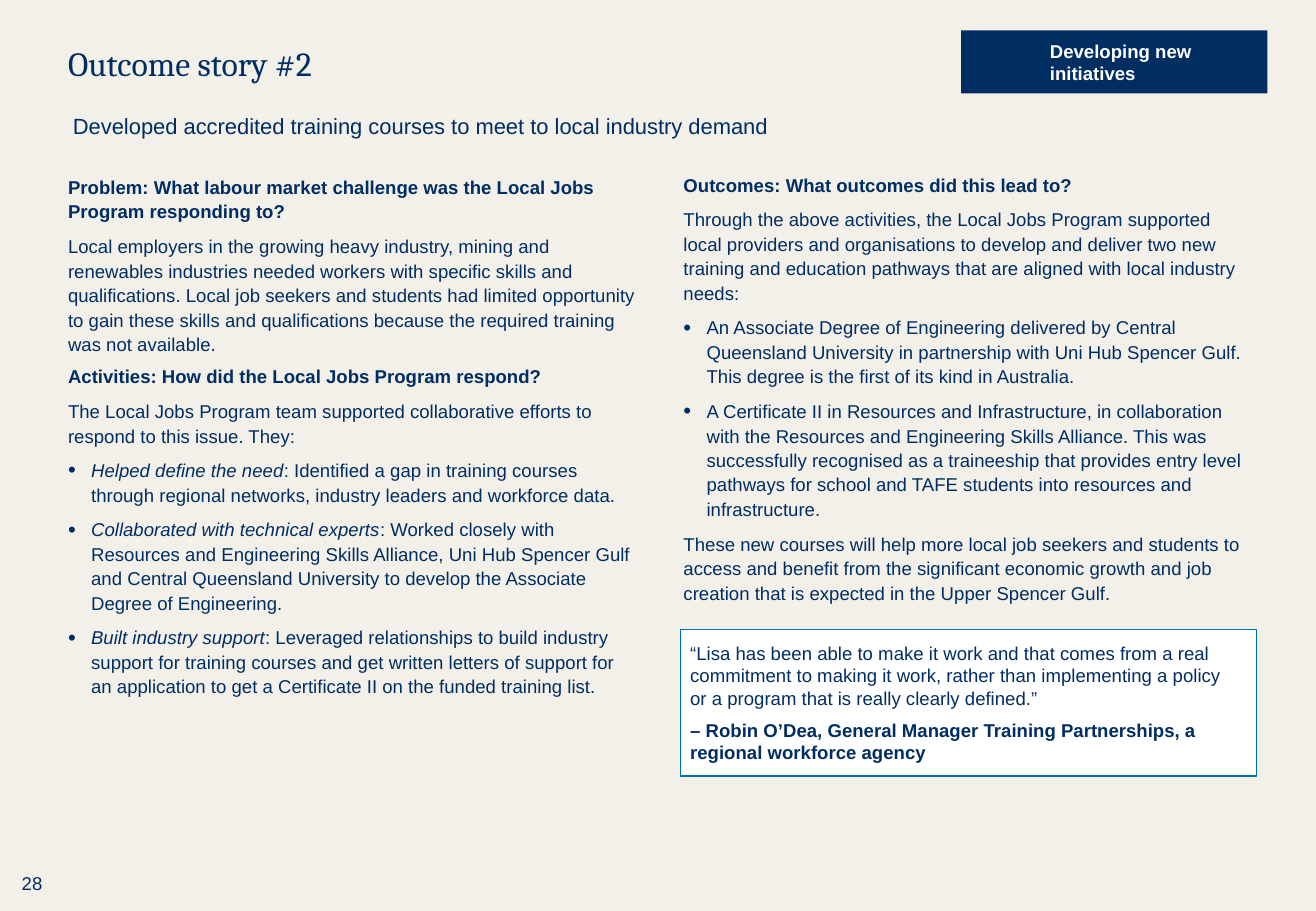
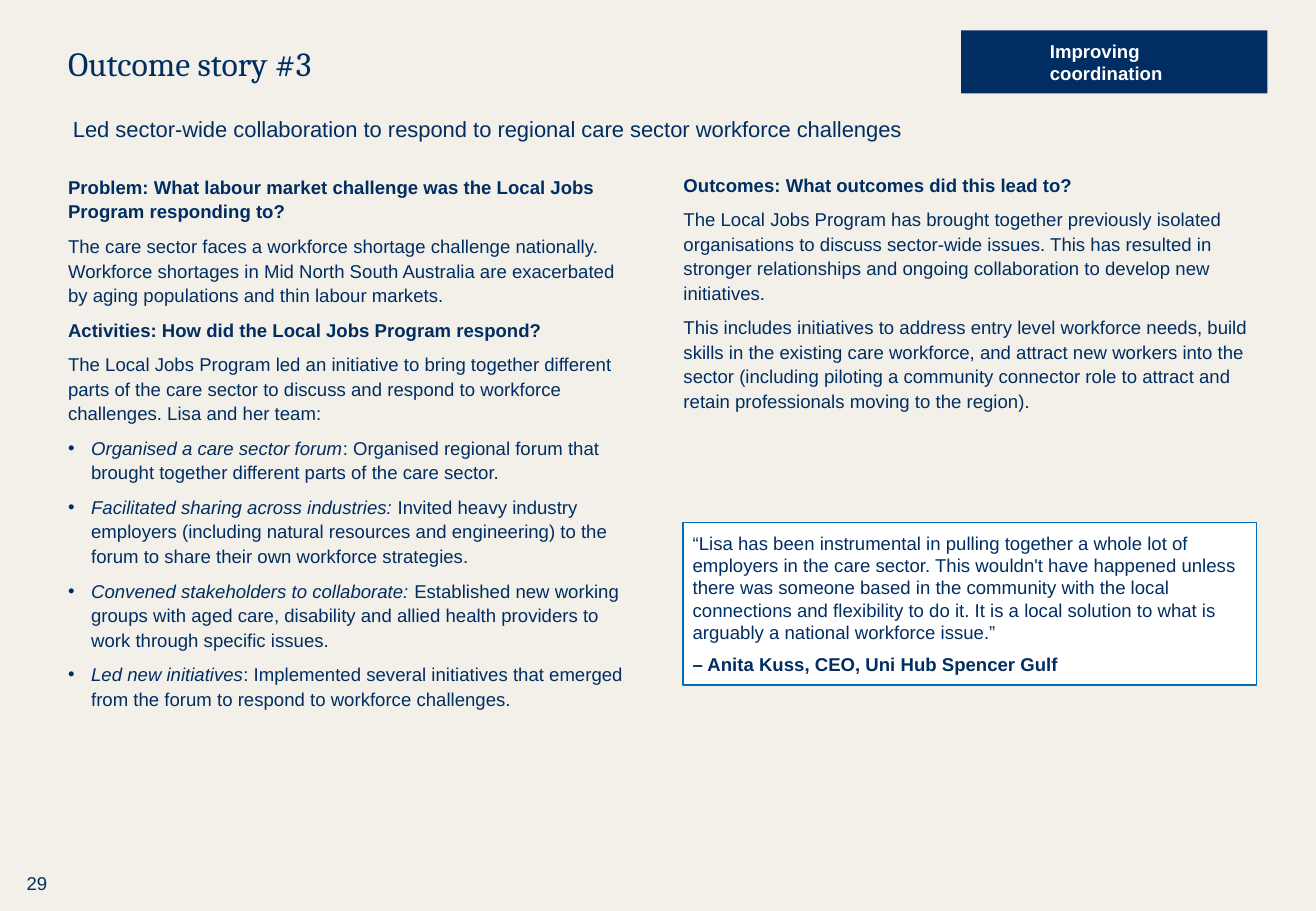
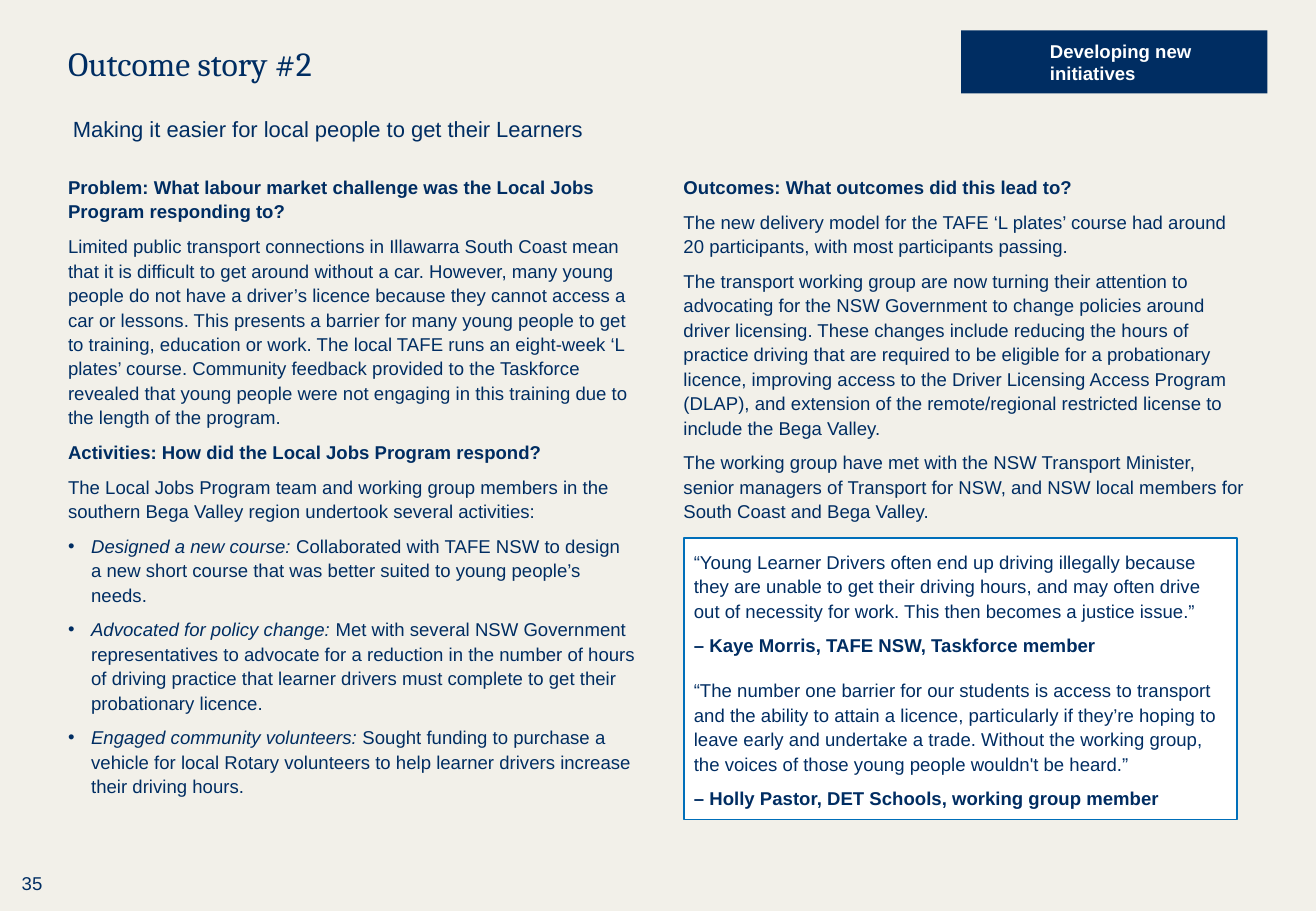
from dataclasses import dataclass

from lxml.etree import SubElement
from pptx import Presentation
from pptx.dml.color import RGBColor
from pptx.enum.shapes import MSO_SHAPE as Shape
from pptx.enum.text import MSO_ANCHOR as Anchor, MSO_AUTO_SIZE as AutoSize, PP_ALIGN as Align
from pptx.oxml.ns import qn
from pptx.util import Inches, Pt


@dataclass
class Theme:
    paper: RGBColor = RGBColor(0xF2, 0xF0, 0xE9)
    navy: RGBColor = RGBColor(0x00, 0x2D, 0x62)
    blue: RGBColor = RGBColor(0x00, 0x6F, 0xBA)
    white: RGBColor = RGBColor(0xFF, 0xFF, 0xFF)
    heading_font: str = "Cambria"
    body_font: str = "Arial"
    title_size: int = 20
    subtitle_size: int = 13
    body_size: int = 11


@dataclass
class Line:
    text: str
    lead: str = ""  # italic opening of a bullet
    bold: bool = False
    bullet: bool = False
    spacing: float = 1.1
    after: int = 6


THEME = Theme()
PAD = 0.08
LEFT, COLUMN_TOP, COLUMN_GAP = 0.48, 1.35, 0.39
FULL_WIDTH = 9.9
TEXT_WIDTH = (FULL_WIDTH - 2 * PAD - COLUMN_GAP) / 2
COLUMN_WIDTH = TEXT_WIDTH + 2 * PAD
BULLET_INDENT = 0.19


def place(box, left, top, width, height, margins=(PAD,) * 4, anchor=Anchor.TOP):
    """Position a box and set up its text frame."""
    box.left, box.top = Inches(left), Inches(top)
    box.width, box.height = Inches(width), Inches(height)
    frame = box.text_frame
    frame.word_wrap = True
    frame.auto_size = AutoSize.NONE
    frame.vertical_anchor = anchor
    (frame.margin_left, frame.margin_top,
     frame.margin_right, frame.margin_bottom) = map(Inches, margins)
    return frame


def write(frame, lines, size=THEME.body_size, font=THEME.body_font,
          color=THEME.navy, bullet_percent=100, align=Align.LEFT):
    """Fill a text frame with formatted paragraphs."""
    for number, line in enumerate(lines):
        para = frame.add_paragraph() if number else frame.paragraphs[0]
        props = para._p.get_or_add_pPr()
        indent = Inches(BULLET_INDENT) if line.bullet else 0
        props.set("marL", str(indent))
        props.set("indent", str(-indent))
        if line.bullet:
            bullet_color = SubElement(props, qn("a:buClr"))
            SubElement(bullet_color, qn("a:srgbClr"), val=str(color))
            SubElement(props, qn("a:buSzPct"), val=str(bullet_percent * 1000))
            SubElement(props, qn("a:buFont"), typeface=font)
            SubElement(props, qn("a:buChar"), char="•")
        else:
            SubElement(props, qn("a:buNone"))
        para.alignment = align
        para.line_spacing = line.spacing
        para.space_before = Pt(0)
        para.space_after = Pt(line.after)
        for text, italic in ((line.lead, True), (line.text, False)):
            if text:
                span = para.add_run()
                span.text = text
                span.font.name, span.font.size = font, Pt(size)
                span.font.bold, span.font.italic = line.bold, italic
                span.font.color.rgb = color


# Shared headings
PROBLEM = Line("Problem: What labour market challenge was the Local Jobs Program responding to?", bold=True)
ACTIVITIES = "Activities: How did the Local Jobs Program respond?"
OUTCOMES = "Outcomes: What outcomes did this lead to?"

# Content of each page
STORIES = [
    dict(
        title="Outcome story #2",
        tag="Developing new initiatives",
        subtitle=Line("Developed accredited training courses to meet to local industry demand", spacing=1.0),
        bullet_percent=120,
        left=[
            PROBLEM,
            Line("Local employers in the growing heavy industry, mining and renewables industries needed "
                 "workers with specific skills and qualifications. Local job seekers and students had "
                 "limited opportunity to gain these skills and qualifications because the required "
                 "training was not available."),
            Line(ACTIVITIES, bold=True, spacing=1.0),
            Line("The Local Jobs Program team supported collaborative efforts to respond to this issue. They:"),
            Line(": Identified a gap in training courses through regional networks, industry leaders "
                 "and workforce data.", "Helped define the need", bullet=True),
            Line(": Worked closely with Resources and Engineering Skills Alliance, Uni Hub Spencer Gulf "
                 "and Central Queensland University to develop the Associate Degree of Engineering.",
                 "Collaborated with technical experts", bullet=True),
            Line(": Leveraged relationships to build industry support for training courses and get "
                 "written letters of support for an application to get a Certificate II on the funded "
                 "training list.", "Built industry support", bullet=True),
        ],
        right=[
            Line(OUTCOMES, bold=True, spacing=1.0),
            Line("Through the above activities, the Local Jobs Program supported local providers and "
                 "organisations to develop and deliver two new training and education pathways that are "
                 "aligned with local industry needs:"),
            Line("An Associate Degree of Engineering delivered by Central Queensland University in "
                 "partnership with Uni Hub Spencer Gulf. This degree is the first of its kind in "
                 "Australia.", bullet=True),
            Line("A Certificate II in Resources and Infrastructure, in collaboration with the Resources "
                 "and Engineering Skills Alliance. This was successfully recognised as a traineeship that "
                 "provides entry level pathways for school and TAFE students into resources and "
                 "infrastructure.", bullet=True),
            Line("These new courses will help more local job seekers and students to access and benefit "
                 "from the significant economic growth and job creation that is expected in the Upper "
                 "Spencer Gulf."),
        ],
        quote_at=(5.6, 5.18, 4.74, 1.21),
        quote_right_pad=0.12,
        quotes=[
            Line("“Lisa has been able to make it work and that comes from a real commitment to making it "
                 "work, rather than implementing a policy or a program that is really clearly defined.”",
                 spacing=1.0),
            Line("– Robin O’Dea, General Manager Training Partnerships, a regional workforce agency",
                 bold=True, spacing=1.0, after=0),
        ],
        number="28",
        number_right_pad=0.09,
    ),
    dict(
        title="Outcome story #3",
        tag="Improving coordination",
        subtitle=Line("Led sector-wide collaboration to respond to regional care sector workforce challenges"),
        bullet_percent=100,
        left=[
            PROBLEM,
            Line("The care sector faces a workforce shortage challenge nationally. Workforce shortages in "
                 "Mid North South Australia are exacerbated by aging populations and thin labour markets."),
            Line(ACTIVITIES, bold=True),
            Line("The Local Jobs Program led an initiative to bring together different parts of the care "
                 "sector to discuss and respond to workforce challenges. Lisa and her team:"),
            Line(": Organised regional forum that brought together different parts of the care sector.",
                 "Organised a care sector forum", bullet=True),
            Line(" Invited heavy industry employers (including natural resources and engineering) to the "
                 "forum to share their own workforce strategies.",
                 "Facilitated sharing across industries:", bullet=True),
            Line(" Established new working groups with aged care, disability and allied health providers "
                 "to work through specific issues.", "Convened stakeholders to collaborate:", bullet=True),
            Line(": Implemented several initiatives that emerged from the forum to respond to workforce "
                 "challenges.", "Led new initiatives", bullet=True),
        ],
        right=[
            Line(OUTCOMES, bold=True, spacing=1.0),
            Line("The Local Jobs Program has brought together previously isolated organisations to discuss "
                 "sector-wide issues. This has resulted in stronger relationships and ongoing "
                 "collaboration to develop new initiatives."),
            Line("This includes initiatives to address entry level workforce needs, build skills in the "
                 "existing care workforce, and attract new workers into the sector (including piloting a "
                 "community connector role to attract and retain professionals moving to the region)."),
        ],
        quote_at=(5.62, 4.3, 4.72, 1.34),
        quote_right_pad=PAD,
        quotes=[
            Line("“Lisa has been instrumental in pulling together a whole lot of employers in the care "
                 "sector. This wouldn't have happened unless there was someone based in the community "
                 "with the local connections and flexibility to do it. It is a local solution to what is "
                 "arguably a national workforce issue.”", spacing=1.0),
            Line("– Anita Kuss, CEO, Uni Hub Spencer Gulf", bold=True, spacing=1.0, after=0),
        ],
        number="29",
        number_right_pad=0.05,
    ),
    dict(
        title="Outcome story #2",
        tag="Developing new initiatives",
        subtitle=Line("Making it easier for local people to get their Learners"),
        bullet_percent=100,
        left=[
            PROBLEM,
            Line("Limited public transport connections in Illawarra South Coast mean that it is difficult "
                 "to get around without a car. However, many young people do not have a driver’s licence "
                 "because they cannot access a car or lessons. This presents a barrier for many young "
                 "people to get to training, education or work. The local TAFE runs an eight-week ‘L "
                 "plates’ course. Community feedback provided to the Taskforce revealed that young people "
                 "were not engaging in this training due to the length of the program."),
            Line(ACTIVITIES, bold=True),
            Line("The Local Jobs Program team and working group members in the southern Bega Valley region "
                 "undertook several activities:"),
            Line(" Collaborated with TAFE NSW to design a new short course that was better suited to young "
                 "people’s needs.", "Designed a new course:", bullet=True),
            Line(" Met with several NSW Government representatives to advocate for a reduction in the "
                 "number of hours of driving practice that learner drivers must complete to get their "
                 "probationary licence.", "Advocated for policy change:", bullet=True),
            Line(" Sought funding to purchase a vehicle for local Rotary volunteers to help learner "
                 "drivers increase their driving hours.", "Engaged community volunteers:", bullet=True),
        ],
        right=[
            Line(OUTCOMES, bold=True),
            Line("The new delivery model for the TAFE ‘L plates’ course had around 20 participants, with "
                 "most participants passing."),
            Line("The transport working group are now turning their attention to advocating for the NSW "
                 "Government to change policies around driver licensing. These changes include reducing "
                 "the hours of practice driving that are required to be eligible for a probationary "
                 "licence, improving access to the Driver Licensing Access Program (DLAP), and extension "
                 "of the remote/regional restricted license to include the Bega Valley."),
            Line("The working group have met with the NSW Transport Minister, senior managers of Transport "
                 "for NSW, and NSW local members for South Coast and Bega Valley."),
        ],
        quote_at=(5.63, 4.43, 4.55, 2.32),
        quote_right_pad=PAD,
        quotes=[
            Line("“Young Learner Drivers often end up driving illegally because they are unable to get "
                 "their driving hours, and may often drive out of necessity for work. This then becomes a "
                 "justice issue.”"),
            Line("– Kaye Morris, TAFE NSW, Taskforce member", bold=True, after=12),
            Line("“The number one barrier for our students is access to transport and the ability to "
                 "attain a licence, particularly if they’re hoping to leave early and undertake a trade. "
                 "Without the working group, the voices of those young people wouldn't be heard.”"),
            Line("– Holly Pastor, DET Schools, working group member", bold=True),
        ],
        number="35",
        number_right_pad=0.09,
    ),
]

# Deck and shared background
deck = Presentation()
deck.slide_width, deck.slide_height = Inches(10.83), Inches(7.5)
background = deck.slide_master.background.fill
background.solid()
background.fore_color.rgb = THEME.paper
two_columns = deck.slide_layouts.get_by_name("Two Content")

for story in STORIES:
    page = deck.slides.add_slide(two_columns)
    title, left_column, right_column = page.placeholders

    # Title and subtitle
    frame = place(title, LEFT, 0.18, FULL_WIDTH, 0.67, anchor=Anchor.MIDDLE)
    write(frame, [Line(story["title"], spacing=1.0, after=0)], THEME.title_size, THEME.heading_font)
    subtitle = page.shapes.add_textbox(0, 0, 0, 0)
    frame = place(subtitle, LEFT, 0.85, FULL_WIDTH, 0.43, (0.12, PAD, PAD, PAD))
    write(frame, [story["subtitle"]], THEME.subtitle_size)

    # Body columns
    for column, left, key in ((left_column, LEFT, "left"),
                              (right_column, LEFT + TEXT_WIDTH + COLUMN_GAP, "right")):
        frame = place(column, left, COLUMN_TOP, COLUMN_WIDTH, 5.57)
        write(frame, story[key], bullet_percent=story["bullet_percent"])

    # Category tag
    tag = page.shapes.add_shape(Shape.RECTANGLE, 0, 0, 0, 0)
    tag.shadow.inherit = False
    tag.fill.solid()
    tag.fill.fore_color.rgb = THEME.navy
    tag.line.fill.background()
    frame = place(tag, 7.91, 0.25, 2.52, 0.52, (0.73, 0, PAD, 0), Anchor.MIDDLE)
    write(frame, [Line(story["tag"], bold=True, spacing=1.0, after=0)], color=THEME.white)

    # Quote box
    quote = page.shapes.add_shape(Shape.RECTANGLE, 0, 0, 0, 0)
    quote.shadow.inherit = False
    quote.fill.solid()
    quote.fill.fore_color.rgb = THEME.white
    quote.line.color.rgb = THEME.blue
    quote.line.width = Pt(0.75)
    frame = place(quote, *story["quote_at"], (PAD, PAD, story["quote_right_pad"], PAD), Anchor.MIDDLE)
    write(frame, story["quotes"])

    # Page number
    number = page.shapes.add_textbox(0, 0, 0, 0)
    frame = place(number, 0.08, 7.18, 0.36, 0.21, (0, 0, story["number_right_pad"], 0))
    write(frame, [Line(story["number"], spacing=1.0, after=0)], align=Align.RIGHT)

deck.save("out.pptx")
